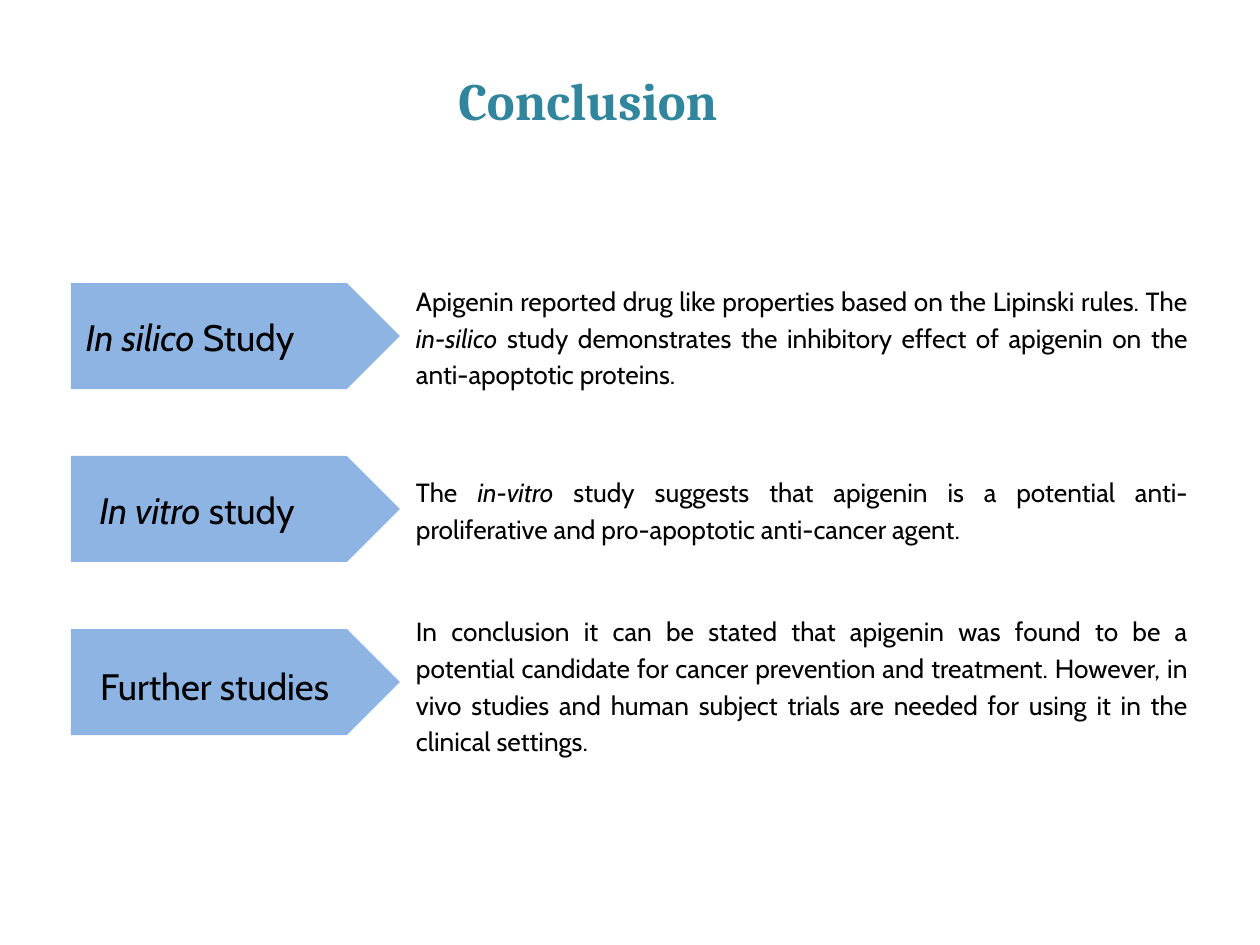
from dataclasses import dataclass

import pptx
import pptx.dml.color
import pptx.enum.shapes
import pptx.enum.text
import pptx.util

EMU_PER_PX = 914400 / 126
ALIGN = pptx.enum.text.PP_ALIGN
ANCHOR = pptx.enum.text.MSO_ANCHOR

ARROW_LEFT, ARROW_TOP, ARROW_WIDTH, ARROW_HEIGHT = 71, 283, 329, 106
ARROW_PITCH = 173
FINDING_LEFT, FINDING_WIDTH = 416, 772
BLUE, TEAL, BLACK = "8EB4E3", "31859C", "000000"


@dataclass(frozen=True)
class Box:
    left: int
    top: int
    width: int
    height: int


@dataclass(frozen=True)
class Span:
    text: str
    italic: bool = False


@dataclass(frozen=True)
class TextStyle:
    font: str
    size: float
    line_spacing: float
    color: str
    alignment: ALIGN
    anchor: ANCHOR = ANCHOR.TOP
    bold: bool = False
    side_margin: int = 0
    end_margin: int = 0


@dataclass(frozen=True)
class Study:
    label_box: Box
    label: list[Span]
    finding_top: int
    finding_height: int
    finding: list[Span]


TITLE_STYLE = TextStyle("Cambria", 30, 40, TEAL, ALIGN.CENTER, bold=True,
                        side_margin=13, end_margin=6)
LABEL_STYLE = TextStyle("Cabin", 21, 29.4, BLACK, ALIGN.CENTER, ANCHOR.MIDDLE,
                        side_margin=4, end_margin=4)
FINDING_STYLE = TextStyle("Cabin", 15, 21, BLACK, ALIGN.JUSTIFY)

STUDIES = [
    Study(
        Box(74, 311, 232, 45),
        [Span("In silico ", True), Span("Study")],
        280, 108,
        [Span("Apigenin reported drug like properties based on the Lipinski rules. The "),
         Span("in-silico", True),
         Span(" study demonstrates the inhibitory effect of apigenin on the "
              "anti-apoptotic proteins.")],
    ),
    Study(
        Box(86, 471, 222, 71),
        [Span("In vitro", True), Span(" study")],
        471, 74,
        [Span("The "), Span("in-vitro ", True),
         Span("study suggests that apigenin is a potential anti-proliferative and "
              "pro-apoptotic anti-cancer agent.")],
    ),
    Study(
        Box(74, 641, 281, 82),
        [Span("Further studies")],
        610, 145,
        [Span("In conclusion it can be stated that apigenin was found to be a potential "
              "candidate for cancer prevention and treatment. However, in vivo studies and "
              "human subject trials are needed for using it in the clinical settings.")],
    ),
]


def emu(px: int) -> pptx.util.Emu:
    return pptx.util.Emu(round(px * EMU_PER_PX))


def rgb(color: str) -> pptx.dml.color.RGBColor:
    return pptx.dml.color.RGBColor.from_string(color)


def edges(box: Box) -> tuple:
    return emu(box.left), emu(box.top), emu(box.width), emu(box.height)


def write_text(shape, spans: list[Span], style: TextStyle) -> None:
    frame = shape.text_frame
    frame.word_wrap = True
    frame.auto_size = pptx.enum.text.MSO_AUTO_SIZE.NONE
    frame.vertical_anchor = style.anchor
    frame.margin_left = frame.margin_right = emu(style.side_margin)
    frame.margin_top = frame.margin_bottom = emu(style.end_margin)
    paragraph = frame.paragraphs[0]
    paragraph.alignment = style.alignment
    paragraph.line_spacing = pptx.util.Pt(style.line_spacing)
    paragraph.font.name = style.font
    paragraph.font.size = pptx.util.Pt(style.size)
    paragraph.font.bold = style.bold
    paragraph.font.color.rgb = rgb(style.color)
    for span in spans:
        run = paragraph.add_run()
        run.text = span.text
        if span.italic:
            run.font.italic = True


def add_text(shapes, box: Box, spans: list[Span], style: TextStyle) -> None:
    write_text(shapes.add_textbox(*edges(box)), spans, style)


def add_arrow(shapes, box: Box) -> None:
    arrow = shapes.add_shape(pptx.enum.shapes.MSO_SHAPE.PENTAGON, *edges(box))
    arrow.adjustments[0] = 0.5
    arrow.shadow.inherit = False
    arrow.fill.solid()
    arrow.fill.fore_color.rgb = rgb(BLUE)
    arrow.line.fill.background()


def add_study(slide, study: Study, row: int) -> None:
    group = slide.shapes.add_group_shape()
    top = ARROW_TOP + row * ARROW_PITCH
    add_arrow(group.shapes, Box(ARROW_LEFT, top, ARROW_WIDTH, ARROW_HEIGHT))
    add_text(group.shapes, study.label_box, study.label, LABEL_STYLE)
    finding_box = Box(FINDING_LEFT, study.finding_top, FINDING_WIDTH, study.finding_height)
    add_text(slide.shapes, finding_box, study.finding, FINDING_STYLE)


def add_title(slide, box: Box, text: str) -> None:
    title = slide.shapes.title
    title.left, title.top, title.width, title.height = edges(box)
    write_text(title, [Span(text)], TITLE_STYLE)


def main() -> None:
    presentation = pptx.Presentation()
    presentation.slide_width, presentation.slide_height = emu(1260), emu(945)
    slide = presentation.slides.add_slide(presentation.slide_layouts[5])
    add_title(slide, Box(273, 55, 630, 78), "Conclusion")
    for row, study in enumerate(STUDIES):
        add_study(slide, study, row)
    presentation.save("out.pptx")


if __name__ == "__main__":
    main()
